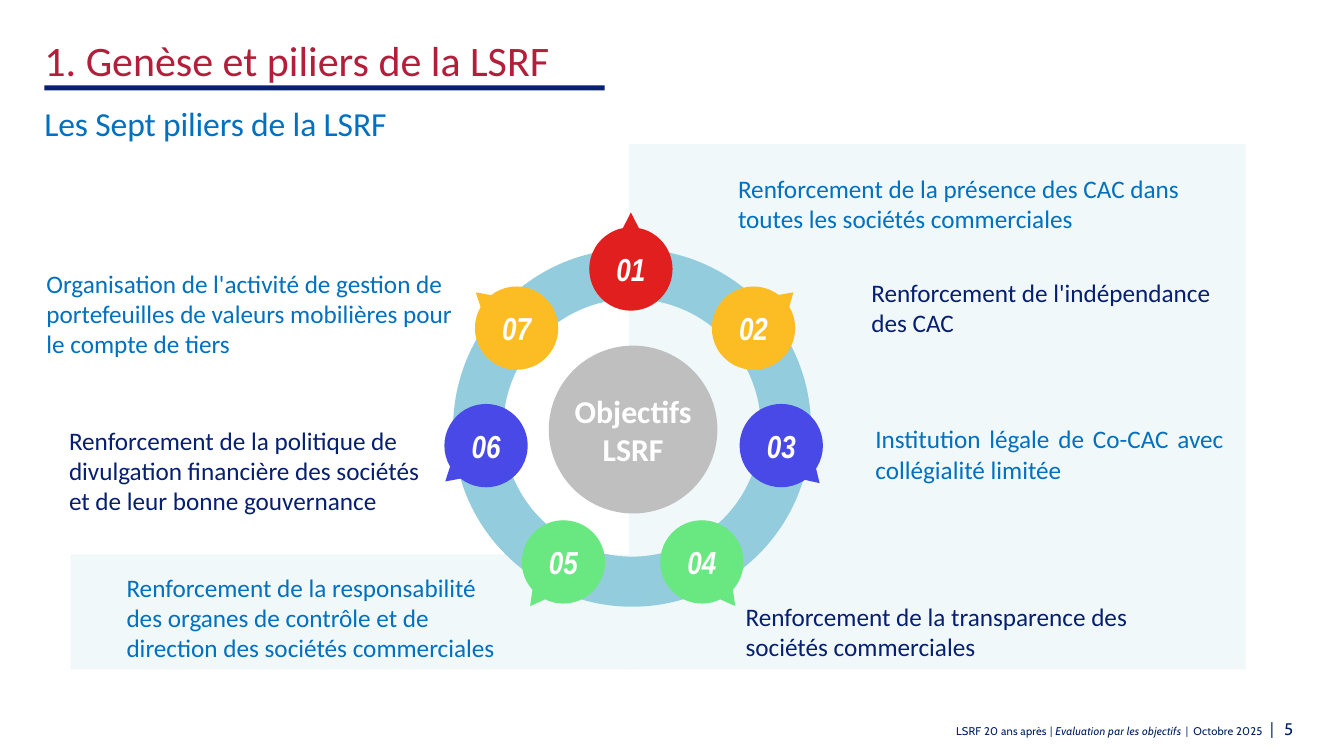
from pptx import Presentation
from pptx.dml.color import RGBColor
from pptx.enum import shapes, text
from pptx.util import Cm, Pt

NAVY, BLUE, RED, WHITE = "071F70", "0070C0", "B31E3A", "FFFFFF"
YELLOW, VIOLET, GREEN = "FCBD24", "4949E7", "69E781"
LEFT, RIGHT = text.PP_ALIGN.LEFT, text.PP_ALIGN.RIGHT
CENTER, JUST = text.PP_ALIGN.CENTER, text.PP_ALIGN.JUSTIFY
RECT, OVAL = shapes.MSO_SHAPE.RECTANGLE, shapes.MSO_SHAPE.OVAL
DONUT, PIN = shapes.MSO_SHAPE.DONUT, shapes.MSO_SHAPE.OVAL_CALLOUT

TITLE = "1. Genèse et piliers de la LSRF"
SUB = "Les Sept piliers de la LSRF"
HUB = ["Objectifs", "LSRF"]
FOOT = [
    ("LSRF 20 ans après ", 8, "Cabin", False, 12),
    ("| ", 8, "Lato", False, 0),
    ("Evaluation par les objectifs", 8, "Cabin", True, 15),
    (" | ", 8, "Lato", False, 70),
    ("Octobre 2025", 8, "Cabin", False, 12),
    (" | ", 12, "Lato", False, 200),
    ("5", 12, "Cabin", False, 0),
]
PANELS = [(15.85, 3.63, 15.54, 13.24), (1.78, 13.97, 14.17, 2.9)]
PILLARS = [
    ("Renforcement de la présence des CAC dans toutes les sociétés commerciales",
     BLUE, LEFT, (18.57, 4.34, 11.23, 1.57), "E11F1F", (15.9, 6.78), (15.9, 5.36)),
    ("Renforcement de l'indépendance des CAC",
     NAVY, LEFT, (21.93, 6.96, 8.81, 1.57), YELLOW, (18.99, 8.27), (19.99, 7.37)),
    ("Institution légale de Co-CAC avec collégialité limitée",
     BLUE, JUST, (22.03, 10.65, 8.81, 1.57), VIOLET, (19.69, 11.23), (20.65, 12.17)),
    ("Renforcement de la transparence des sociétés commerciales",
     NAVY, LEFT, (18.76, 15.12, 9.73, 1.57), GREEN, (17.69, 14.16), (18.54, 15.27)),
    ("Renforcement de la responsabilité des organes de contrôle et de "
     "direction des sociétés commerciales",
     BLUE, LEFT, (3.16, 14.38, 9.73, 2.34), GREEN, (14.2, 14.16), (13.36, 15.27)),
    ("Renforcement de la politique de divulgation financière des sociétés "
     "et de leur bonne gouvernance",
     NAVY, LEFT, (1.71, 10.68, 8.99, 2.34), VIOLET, (12.25, 11.23), (11.23, 12.14)),
    ("Organisation de l'activité de gestion de portefeuilles de valeurs "
     "mobilières pour le compte de tiers",
     BLUE, LEFT, (1.14, 6.72, 10.8, 2.39), YELLOW, (13.02, 8.27), (11.99, 7.37)),
]
SIZE = 2.1


def color(code):
    return RGBColor.from_string(code)


def block(kind, box, code):
    shape = slide.shapes.add_shape(kind, *map(Cm, box))
    shape.shadow.inherit = False
    shape.fill.solid()
    shape.fill.fore_color.rgb = color(code)
    shape.line.fill.background()
    return shape


def inset(frame, left, top, right, bottom):
    frame.margin_left, frame.margin_top = Cm(left), Cm(top)
    frame.margin_right, frame.margin_bottom = Cm(right), Cm(bottom)


def style(font, size, face, code, bold=False, italic=False):
    font.size, font.name, font.bold, font.italic = Pt(size), face, bold, italic
    font.color.rgb = color(code)


def space(run, gap):
    run._r.get_or_add_rPr().set("spc", str(gap))


def write(frame, words, size, code, align=LEFT):
    frame.word_wrap = True
    frame.auto_size = text.MSO_AUTO_SIZE.NONE
    frame.vertical_anchor = text.MSO_ANCHOR.TOP
    inset(frame, 0.03, 0.03, 0, 0)
    para = frame.paragraphs[0]
    para.text, para.alignment, para.space_before = words, align, Pt(1)
    style(para.font, size, "Calibri", code)
    return para


def label(box, *rest):
    return write(slide.shapes.add_textbox(*map(Cm, box)).text_frame, *rest)


def badge(shape, lines, face, italic):
    frame = shape.text_frame
    frame.word_wrap = True
    frame.vertical_anchor = text.MSO_ANCHOR.MIDDLE
    inset(frame, 0, 0, 0, 0)
    frame.text = "\n".join(lines)
    for para in frame.paragraphs:
        para.alignment = CENTER
        style(para.font, 22.7, face, WHITE, True, italic)


def pin(mid, tip, code):
    shape = block(PIN, [m - SIZE / 2 for m in mid] + [SIZE, SIZE], code)
    for i in range(2):
        shape.adjustments[i] = round((tip[i] - mid[i]) / SIZE, 2)
    return shape


deck = Presentation()
deck.slide_width, deck.slide_height = Cm(33.87), Cm(19.05)
slide = deck.slides.add_slide(deck.slide_layouts[5])

title = slide.shapes.title
title.left, title.top, title.width, title.height = map(Cm, (1.09, 0.84, 30.91, 1.32))
write(title.text_frame, TITLE, 30, RED)
block(RECT, (1.12, 2.15, 14.12, 0.13), "072070")
sub = label((1.09, 2.57, 14.55, 1.07), SUB, 24, BLUE)
space(sub.runs[0], -10)

foot = slide.shapes.add_textbox(*map(Cm, (18.19, 18.11, 14.4, 0.51))).text_frame
foot.word_wrap = True
inset(foot, 0, 0, 0, 0)
line = foot.paragraphs[0]
line.alignment = RIGHT
for words, size, face, italic, gap in FOOT:
    run = line.add_run()
    run.text = words
    style(run.font, size, face, "002060", italic=italic)
    space(run, gap)

for box in PANELS:
    block(RECT, box, "F0F8FA")
ring = block(DONUT, (11.42, 6.27, 9.02, 9.02), "93CDDD")
ring.adjustments[0] = 0.14
hub = block(OVAL, (13.83, 8.71, 4.25, 4.23), "BFBFBF")
badge(hub, HUB, "Calibri", False)

for rank, (words, ink, align, box, code, mid, tip) in enumerate(PILLARS, 1):
    label(box, words, 18, ink, align)
    badge(pin(mid, tip, code), [f"{rank:02d}"], "Arial Narrow", True)

deck.save("out.pptx")
